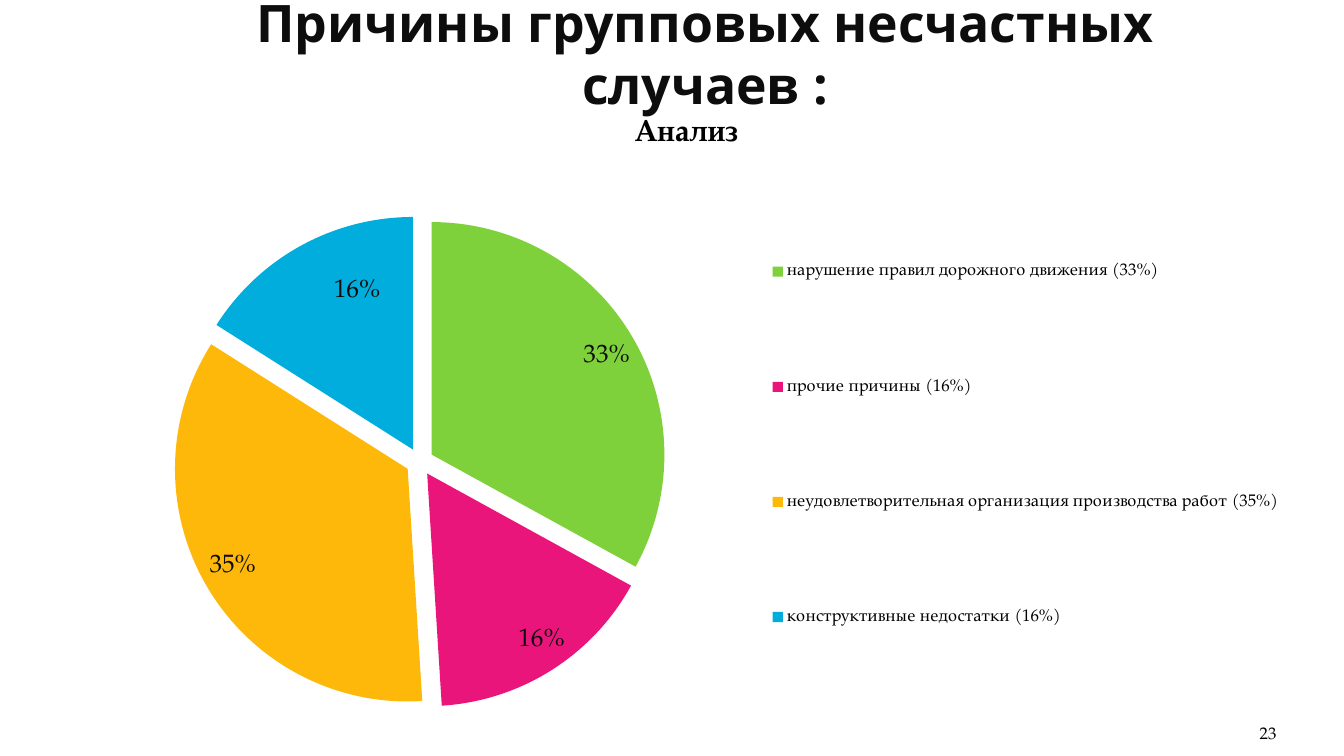
from lxml import etree
from pptx import Presentation
from pptx import util as u
from pptx.chart.data import CategoryChartData
from pptx.dml.color import RGBColor
from pptx.enum import chart as charts, text
from pptx.oxml import ns

PX = 9144
BLACK = RGBColor(0x00, 0x00, 0x00)
DARK = RGBColor(0x0D, 0x0D, 0x0D)
GREEN = RGBColor(0x7F, 0xD1, 0x3B)
PINK = RGBColor(0xEA, 0x15, 0x7A)
AMBER = RGBColor(0xFE, 0xB8, 0x0A)
BLUE = RGBColor(0x00, 0xAD, 0xDC)
HEADING_FONT = "Open Sans"
BODY_FONT = "TeX Gyre Pagella"
CHART_BOX = (75, 107, 1208, 630)
CAUSES = [
    ("нарушение правил дорожного движения (33%)", 0.33, GREEN, (3, 5)),
    ("прочие причины (16%)", 0.16, PINK, (16, -11)),
    ("неудовлетворительная организация производства работ (35%)", 0.35, AMBER, (-3, -4)),
    ("конструктивные недостатки (16%)", 0.16, BLUE, (30, 29)),
]


def px(*lengths):
    """Turn whole px into EMU."""
    return [u.Emu(length * PX) for length in lengths]


def style_font(font, name, size, color, bold=False):
    """Set the face, size, colour and weight of a font."""
    font.name, font.size, font.bold = name, u.Pt(size), bold
    font.color.rgb = color


def make_layout(**settings):
    """Build a manual chart layout element from its settings."""
    layout = etree.Element(ns.qn("c:layout"))
    manual = etree.SubElement(layout, ns.qn("c:manualLayout"))
    for tag, value in settings.items():
        etree.SubElement(manual, ns.qn(f"c:{tag}")).set("val", str(value))
    return layout


def place_after(anchor, layout):
    """Put a layout after its anchor in place of any earlier layout."""
    parent = anchor.getparent()
    for earlier in parent.findall(ns.qn("c:layout")):
        parent.remove(earlier)
    anchor.addnext(layout)


def add_title(slide, box):
    """Place and format the title placeholder."""
    title = slide.shapes.title
    title.left, title.top, title.width, title.height = px(*box)
    frame = title.text_frame
    frame.text = "Причины групповых несчастных случаев :"
    frame.word_wrap = True
    frame.auto_size = text.MSO_AUTO_SIZE.NONE
    frame.vertical_anchor = text.MSO_ANCHOR.MIDDLE
    paragraph = frame.paragraphs[0]
    paragraph.alignment = text.PP_ALIGN.CENTER
    style_font(paragraph.runs[0].font, HEADING_FONT, 36.9, DARK, True)


def format_slices(plot, width, height):
    """Colour and separate the slices and place their labels."""
    series = plot.series[0]
    explosion = etree.Element(ns.qn("c:explosion"), val="6")
    series._element.find(ns.qn("c:tx")).addnext(explosion)
    labels = series.data_labels
    labels.show_value = True
    labels.show_percentage = False
    labels.number_format = "0%"
    labels.number_format_is_linked = False
    labels.position = charts.XL_LABEL_POSITION.INSIDE_END
    style_font(labels.font, BODY_FONT, 18, DARK)
    for index, (_, _, color, _) in enumerate(CAUSES):
        point = series.points[index]
        point.format.fill.solid()
        point.format.fill.fore_color.rgb = color
        point.data_label.position = charts.XL_LABEL_POSITION.INSIDE_END
        style_font(point.data_label.font, BODY_FONT, 18, DARK)
    label_elements = labels._element.findall(ns.qn("c:dLbl"))
    for element, (_, _, _, (right, down)) in zip(label_elements, CAUSES):
        offset = make_layout(x=right / width, y=down / height)
        place_after(element.find(ns.qn("c:idx")), offset)


def add_causes_chart(slide, box):
    """Add the pie of accident causes with its title and legend."""
    data = CategoryChartData(number_format="0%")
    data.categories = [cause[0] for cause in CAUSES]
    data.add_series("Анализ", [cause[1] for cause in CAUSES])
    chart = slide.shapes.add_chart(charts.XL_CHART_TYPE.PIE, *px(*box), data).chart
    style_font(chart.font, BODY_FONT, 18, BLACK)
    edges = {"xMode": "edge", "yMode": "edge"}
    chart.has_title = True
    chart.chart_title.include_in_layout = False
    frame = chart.chart_title.text_frame
    frame.text = "Анализ"
    style_font(frame.paragraphs[0].runs[0].font, BODY_FONT, 21.6, BLACK, True)
    title_text = chart.chart_title._element.find(ns.qn("c:tx"))
    place_after(title_text, make_layout(**edges, x=0.455, y=0.004))
    plot = chart.plots[0]
    plot.vary_by_categories = True
    format_slices(plot, *box[2:])
    chart.has_legend = True
    legend = chart.legend
    legend.position = charts.XL_LEGEND_POSITION.RIGHT
    legend.include_in_layout = False
    style_font(legend.font, BODY_FONT, 12, BLACK)
    legend_position = legend._element.find(ns.qn("c:legendPos"))
    place_after(legend_position, make_layout(**edges, x=0.565, y=0.09, w=0.43, h=0.88))
    plot_area = plot._element.getparent()
    for layout in plot_area.findall(ns.qn("c:layout")):
        plot_area.remove(layout)
    plot_area.insert(0, make_layout(
        layoutTarget="inner", **edges, x=0.08, y=0.115, w=0.405, h=0.885))


def add_slide_number(slide, box):
    """Add the slide number at the bottom right."""
    frame = slide.shapes.add_textbox(*px(*box)).text_frame
    frame.word_wrap = True
    frame.margin_left = frame.margin_right = 0
    frame.vertical_anchor = text.MSO_ANCHOR.BOTTOM
    frame.text = "23"
    paragraph = frame.paragraphs[0]
    paragraph.alignment = text.PP_ALIGN.RIGHT
    style_font(paragraph.runs[0].font, BODY_FONT, 12, BLACK)


def main():
    """Build and save the slide."""
    presentation = Presentation()
    presentation.slide_width, presentation.slide_height = px(1333, 750)
    slide = presentation.slides.add_slide(presentation.slide_layouts[5])
    add_title(slide, (133, 13, 1133, 79))
    add_causes_chart(slide, CHART_BOX)
    add_slide_number(slide, (1155, 702, 111, 40))
    presentation.save("out.pptx")


if __name__ == "__main__":
    main()
